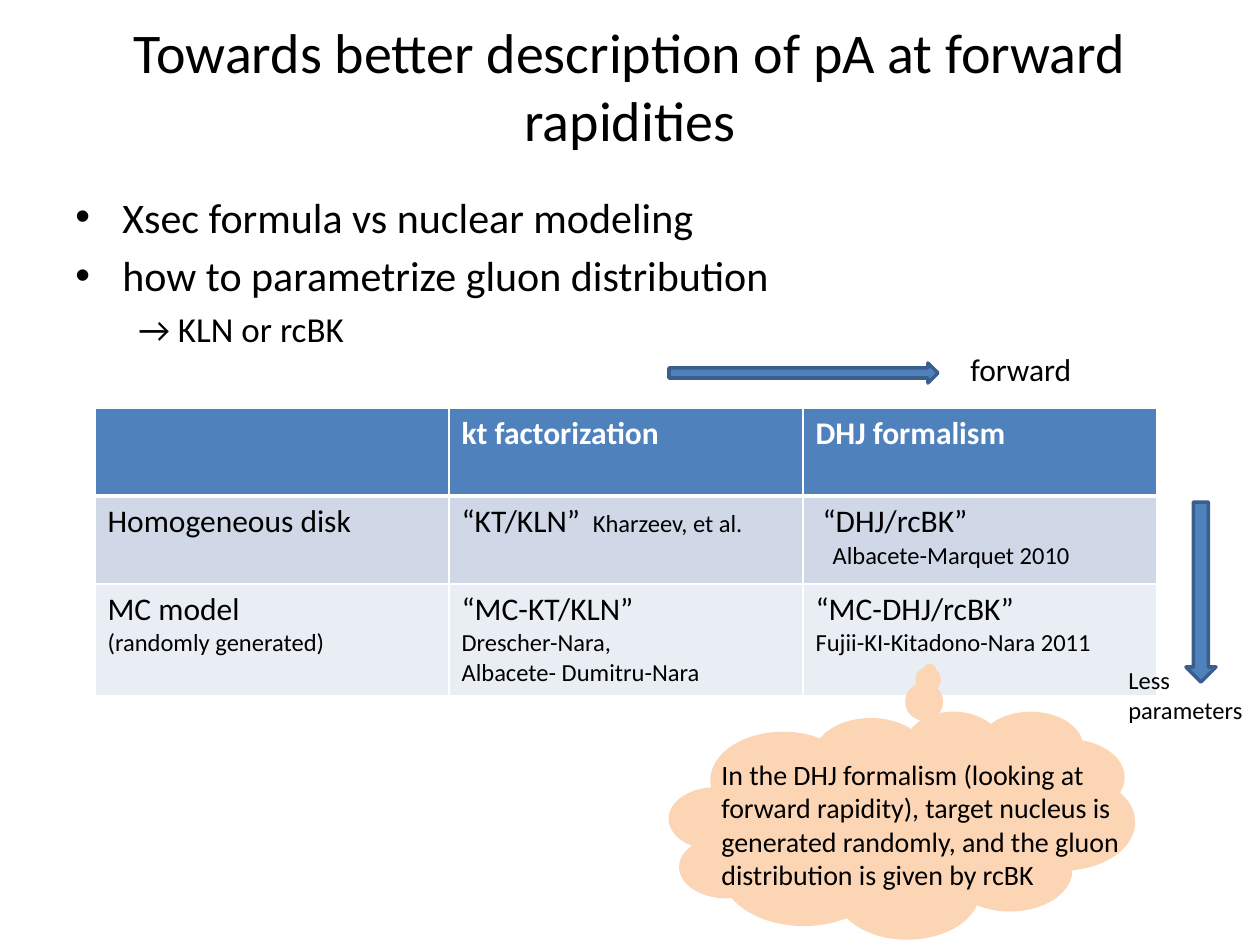
from lxml.etree import SubElement
from pptx import Presentation
from pptx.dml.color import RGBColor
from pptx.enum.shapes import MSO_SHAPE as Shape
from pptx.enum.text import MSO_ANCHOR as Anchor, PP_ALIGN as Align
from pptx.oxml.ns import qn
from pptx.util import Emu, Pt

PX_PER_INCH = 126
BLUE, DARK_BLUE, PEACH = "4F81BD", "3A5F8C", "FCD5B5"
BLACK, WHITE = "000000", "FFFFFF"
ROW_FILLS = [BLUE, "D0D8E8", "E9EDF4"]


def px(length):
    return Emu(round(length * 914400 / PX_PER_INCH))


def rgb(color):
    return RGBColor.from_string(color)


class SlideBuilder:
    font = "Calibri"

    def __init__(self, slide):
        self.slide = slide

    def fill_text(self, frame, paragraphs, color=BLACK, bold=False):
        """Each paragraph is a list of (text, size) runs."""
        for i, runs in enumerate(paragraphs):
            paragraph = frame.paragraphs[0] if i == 0 else frame.add_paragraph()
            for text, size in runs:
                run = paragraph.add_run()
                run.text = text
                run.font.name, run.font.size = self.font, Pt(size)
                run.font.bold = bold
                run.font.color.rgb = rgb(color)

    def indent(self, paragraph, left, first=0):
        properties = paragraph._p.get_or_add_pPr()
        properties.set("marL", str(px(left)))
        properties.set("indent", str(px(first)))
        return properties

    def bullet(self, paragraph):
        properties = self.indent(paragraph, 47, -47)
        SubElement(properties, qn("a:buFont"), typeface="Arial")
        SubElement(properties, qn("a:buChar"), char="•")

    def text(self, box, paragraphs, align=Align.LEFT, anchor=Anchor.TOP):
        frame = self.slide.shapes.add_textbox(*map(px, box)).text_frame
        frame.word_wrap = True
        frame.vertical_anchor = anchor
        self.fill_text(frame, paragraphs)
        for paragraph in frame.paragraphs:
            paragraph.alignment = align
        return frame

    def shape(self, preset, box, fill, line=None):
        shape = self.slide.shapes.add_shape(preset, *map(px, box))
        shape.shadow.inherit = False
        shape.fill.solid()
        shape.fill.fore_color.rgb = rgb(fill)
        if line:
            shape.line.color.rgb = rgb(line)
            shape.line.width = Pt(2)
        else:
            shape.line.fill.background()
        return shape

    def border(self, cell, side, width):
        line = SubElement(cell._tc.get_or_add_tcPr(), qn(f"a:ln{side}"), w=str(Pt(width)))
        SubElement(SubElement(line, qn("a:solidFill")), qn("a:srgbClr"), val=WHITE)

    def table(self, box, row_heights, rows):
        frame = self.slide.shapes.add_table(len(rows), len(rows[0]), *map(px, box))
        table = frame.table
        for r, (height, row) in enumerate(zip(row_heights, rows)):
            table.rows[r].height = px(height)
            header = r == 0
            widths = {"L": 1, "R": 1, "T": 3 if r == 1 else 1, "B": 3 if header else 1}
            for c, paragraphs in enumerate(row):
                cell = table.cell(r, c)
                for side, width in widths.items():
                    self.border(cell, side, width)
                cell.fill.solid()
                cell.fill.fore_color.rgb = rgb(ROW_FILLS[r])
                self.fill_text(cell.text_frame, paragraphs, WHITE if header else BLACK, header)
        return table


def main():
    deck = Presentation()
    deck.slide_width, deck.slide_height = px(1260), px(945)
    builder = SlideBuilder(deck.slides.add_slide(deck.slide_layouts[6]))

    # Comparison of formalisms and nuclear models
    comparison = builder.table((95, 408, 1062, 288), (88, 88, 112), [
        [[], [[("kt factorization", 18)]], [[("DHJ formalism", 18)]]],
        [
            [[("Homogeneous disk", 18)]],
            [[("“KT/KLN” ", 18), (" Kharzeev, et al.", 14)]],
            [[("“DHJ/rcBK”", 18)], [("Albacete-Marquet 2010", 14)]],
        ],
        [
            [[("MC model", 18)], [("(randomly generated)", 14)]],
            [[("“MC-KT/KLN”", 18)], [("Drescher-Nara,", 14)],
             [("Albacete- Dumitru-Nara", 14)]],
            [[("“MC-DHJ/rcBK”", 18)], [("Fujii-KI-Kitadono-Nara 2011", 14)]],
        ],
    ])
    for paragraph, left in zip(comparison.cell(1, 2).text_frame.paragraphs, (7, 17)):
        builder.indent(paragraph, left)

    # Thought cloud behind its explanation
    cloud = builder.shape(Shape.CLOUD_CALLOUT, (669, 711, 466, 228), PEACH)
    cloud.adjustments[0], cloud.adjustments[1] = 0.06, -0.68

    # Title and main points
    builder.text((63, 6, 1134, 158),
                 [[("Towards better description of pA at forward rapidities", 32)]],
                 Align.CENTER, Anchor.MIDDLE)
    points = builder.text((63, 185, 1134, 624), [
        [("Xsec formula vs nuclear modeling", 24)],
        [("how to parametrize gluon distribution", 24)],
        [("→ KLN or rcBK", 20)],
    ]).paragraphs
    for point in points:
        point.space_before = Pt(0.2 * point.runs[0].font.size.pt)
    for point in points[:2]:
        builder.bullet(point)
    builder.indent(points[2], 63)

    builder.text((709, 751, 456, 149), [[(
        "In the DHJ formalism (looking at forward rapidity), target nucleus is "
        "generated randomly, and the gluon distribution is given by rcBK", 16)]])

    # Trend arrows and their labels
    builder.shape(Shape.RIGHT_ARROW, (669, 363, 269, 20), BLUE, DARK_BLUE)
    builder.shape(Shape.DOWN_ARROW, (1186, 502, 30, 180), BLUE, DARK_BLUE)
    builder.text((958, 344, 149, 50), [[("forward", 18)]])
    builder.text((1116, 659, 149, 72), [[("Less", 14)], [("parameters", 14)]])

    deck.save("out.pptx")


if __name__ == "__main__":
    main()
